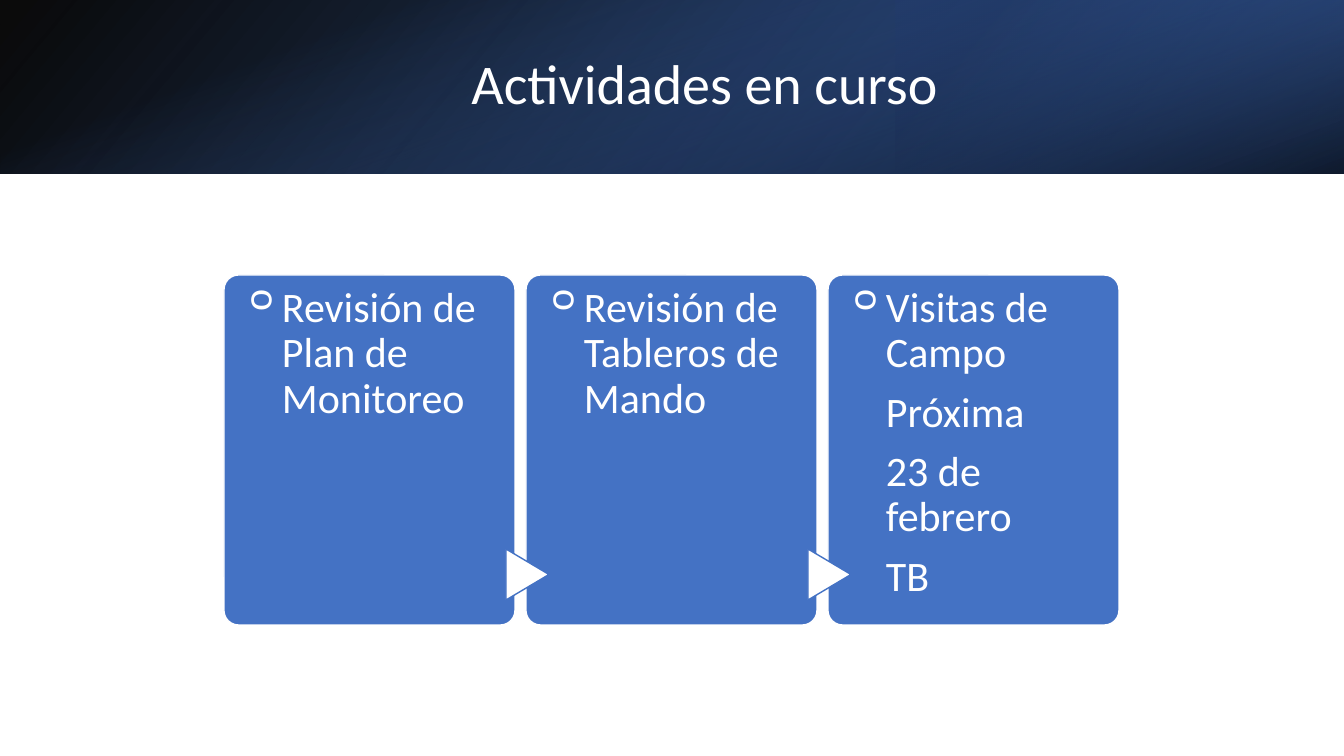
from lxml import etree
from pptx import Presentation
from pptx.dml.color import RGBColor
from pptx.enum.shapes import MSO_SHAPE
from pptx.enum.text import MSO_ANCHOR, PP_ALIGN
from pptx.oxml.ns import qn
from pptx.util import Emu, Pt

RECT = MSO_SHAPE.RECTANGLE
ROUND_RECT = MSO_SHAPE.ROUNDED_RECTANGLE
TRIANGLE = MSO_SHAPE.FLOWCHART_EXTRACT
CENTER, LEFT, RIGHT = PP_ALIGN.CENTER, PP_ALIGN.LEFT, PP_ALIGN.RIGHT
MIDDLE, TOP = MSO_ANCHOR.MIDDLE, MSO_ANCHOR.TOP

EMU_PER_PX = 914400 / 100.8
FONT = "Calibri"
WHITE, BLUE = "FFFFFF", "4472C4"
WIDTH, HEIGHT, BAND_HEIGHT = 1344, 756, 174
CARD_LEFT, CARD_TOP, CARD_WIDTH, CARD_HEIGHT, CARD_STEP = 224, 275, 291, 350, 302

ACTIVITIES = [
    ["Revisión de Plan de Monitoreo"],
    ["Revisión de Tableros de Mando"],
    ["Visitas de Campo", "Próxima", "23 de febrero", "TB"],
]


def px(length):
    return Emu(round(length * EMU_PER_PX))


def color(value):
    return RGBColor.from_string(value)


def add_block(shapes, preset, box, rotation=0):
    block = shapes.add_shape(preset, *map(px, box))
    block.shadow.inherit = False
    block.rotation = rotation
    return block


def paint(block, fill, line):
    block.fill.solid()
    block.fill.fore_color.rgb = color(fill)
    block.line.color.rgb = color(line)
    block.line.width = Pt(1)


def add_gradient(shapes, box, stops, angle, rotation=0, flipped=False):
    layer = add_block(shapes, RECT, box, rotation)
    layer.line.fill.background()
    properties = layer._element.spPr
    if flipped:
        properties.find(qn("a:xfrm")).set("flipH", "1")
    gradient = etree.Element(qn("a:gradFill"), rotWithShape="1")
    stop_list = etree.SubElement(gradient, qn("a:gsLst"))
    for position, value, opacity in stops:
        stop = etree.SubElement(stop_list, qn("a:gs"), pos=str(position * 1000))
        tint = etree.SubElement(stop, qn("a:srgbClr"), val=value)
        etree.SubElement(tint, qn("a:alpha"), val=str(opacity * 1000))
    etree.SubElement(gradient, qn("a:lin"), ang=str(angle * 60000), scaled="0")
    properties.find(qn("a:prstGeom")).addnext(gradient)


def write(frame, lines, size, align, anchor, space_after=0):
    frame.word_wrap = True
    frame.vertical_anchor = anchor
    for index, line in enumerate(lines):
        paragraph = frame.add_paragraph() if index else frame.paragraphs[0]
        paragraph.alignment = align
        paragraph.line_spacing = 0.9
        paragraph.space_after = Pt(space_after)
        run = paragraph.add_run()
        run.text = line
        run.font.name = FONT
        run.font.size = Pt(size)
        run.font.color.rgb = color(WHITE)


def add_label(shapes, box, lines, align=LEFT, right_inset=0, rotation=0):
    label = shapes.add_textbox(*map(px, box))
    label.rotation = rotation
    frame = label.text_frame
    frame.margin_left = frame.margin_bottom = 0
    frame.margin_top, frame.margin_right = px(11), px(right_inset)
    write(frame, lines, 30, align, TOP, 10)


def add_card(shapes, left, lines, has_arrow):
    card = add_block(shapes, ROUND_RECT, (left, CARD_TOP, CARD_WIDTH, CARD_HEIGHT))
    card.adjustments[0] = 0.05
    paint(card, BLUE, WHITE)
    add_label(shapes, (left - 114, 389, 287, 58), ["o"], RIGHT, 15, 270)
    if has_arrow:
        arrow = add_block(shapes, TRIANGLE, (left - 24, 553, 51, 43), 90)
        paint(arrow, WHITE, BLUE)
    add_label(shapes, (left + 58, CARD_TOP, 218, CARD_HEIGHT), lines)


def add_header(slide):
    shapes = slide.shapes
    add_gradient(shapes, (0, 0, WIDTH, BAND_HEIGHT),
                 [(0, "000000", 96), (100, "2F5597", 100)], 140, flipped=True)
    add_gradient(shapes, (896, 0, 448, BAND_HEIGHT),
                 [(19, "203864", 68), (100, BLUE, 79)], 320, 180, True)
    offset = (WIDTH - BAND_HEIGHT) // 2
    add_gradient(shapes, (offset, -offset, BAND_HEIGHT, WIDTH),
                 [(23, BLUE, 0), (99, "000000", 74)], 340, 90)
    title = shapes.title
    title.left, title.top, title.width, title.height = map(px, (151, 38, 1107, 97))
    write(title.text_frame, ["Actividades en curso"], 40, CENTER, MIDDLE)
    shapes._spTree.append(title._element)


def main():
    deck = Presentation()
    deck.slide_width, deck.slide_height = px(WIDTH), px(HEIGHT)
    slide = deck.slides.add_slide(deck.slide_layouts[5])
    add_header(slide)
    process = slide.shapes.add_group_shape()
    for index, lines in enumerate(ACTIVITIES):
        add_card(process.shapes, CARD_LEFT + index * CARD_STEP, lines, index > 0)
    deck.save("out.pptx")


if __name__ == "__main__":
    main()
